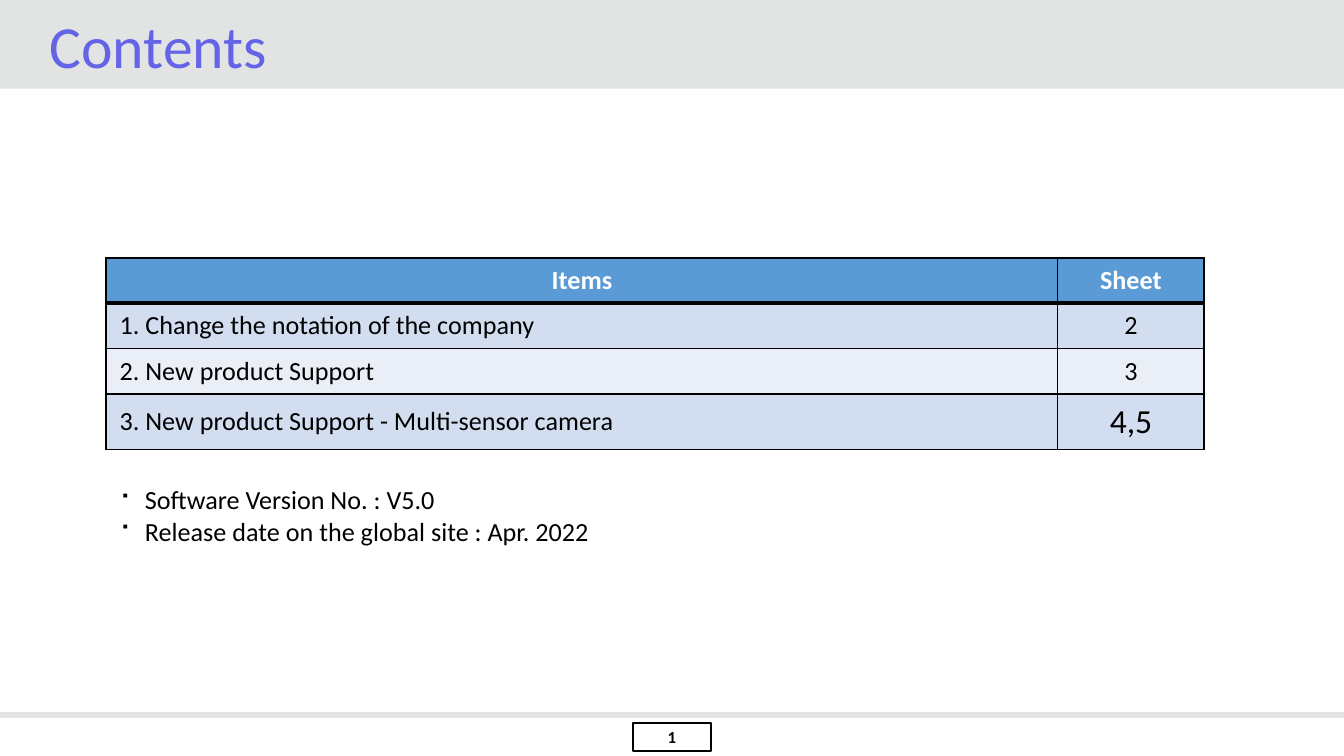
"""Build the contents slide with its table of items and release details."""
import lxml.etree
import pptx
import pptx.dml.color
import pptx.enum.shapes
import pptx.enum.text
import pptx.oxml
import pptx.oxml.ns
import pptx.util

Inches = pptx.util.Inches
Pt = pptx.util.Pt
ALIGN = pptx.enum.text.PP_ALIGN
MIDDLE = pptx.enum.text.MSO_ANCHOR.MIDDLE
COLORS = {
    "band": "E2E3E3",
    "title": "6464E6",
    "header": "5B9BD5",
    "odd": "D2DEEF",
    "even": "EAEFF7",
    "black": "000000",
    "white": "FFFFFF",
}


def rgb(name):
    return pptx.dml.color.RGBColor.from_string(COLORS[name])


def write(para, text, size=14, color="black", bold=False, align=ALIGN.LEFT, bullet=None):
    para.alignment = align
    if bullet:
        properties = para._p.get_or_add_pPr()
        properties.set("marL", str(Inches(0.19)))
        properties.set("indent", str(Inches(-0.19)))
        face = lxml.etree.SubElement(properties, pptx.oxml.ns.qn("a:buFont"))
        face.set("typeface", "Wingdings")
        mark = lxml.etree.SubElement(properties, pptx.oxml.ns.qn("a:buChar"))
        mark.set("char", bullet)
    span = para.add_run()
    span.text = text
    span.font.name = "Calibri"
    span.font.size = Pt(size)
    span.font.bold = bold
    span.font.color.rgb = rgb(color)


deck = pptx.Presentation()
deck.slide_width = Inches(10)
deck.slide_height = Inches(10) * 9 // 16
page = deck.slides.add_slide(deck.slide_layouts[6])
rectangle = pptx.enum.shapes.MSO_SHAPE.RECTANGLE

band = page.shapes.add_shape(rectangle, 0, 0, Inches(10), Inches(0.66))
band.shadow.inherit = False
band.fill.solid()
band.fill.fore_color.rgb = rgb("band")
band.line.fill.background()

rule = page.shapes.add_connector(
    pptx.enum.shapes.MSO_CONNECTOR.STRAIGHT, 0, Inches(5.32), Inches(10), Inches(5.32))
rule.line.color.rgb = rgb("band")
rule.line.width = Pt(3)
lxml.etree.SubElement(rule.element.spPr, pptx.oxml.ns.qn("a:effectLst"))

number = page.shapes.add_shape(
    rectangle, Inches(4.71), Inches(5.38), Inches(0.58), Inches(0.21))
number.shadow.inherit = False
number.fill.background()
number.line.color.rgb = rgb("black")
number.line.width = Pt(1)
frame = number.text_frame
frame.margin_left = frame.margin_right = Inches(0.03)
frame.margin_top = frame.margin_bottom = Inches(0.03)
frame.vertical_anchor = MIDDLE
write(frame.paragraphs[0], "1", size=9, bold=True, align=ALIGN.CENTER)

title = page.shapes.add_textbox(Inches(0.27), Inches(0.01), Inches(9.34), Inches(0.66))
frame = title.text_frame
frame.word_wrap = True
frame.vertical_anchor = MIDDLE
frame.margin_bottom = 0
frame.paragraphs[0].line_spacing = 0.9
write(frame.paragraphs[0], "Contents", size=32, color="title")

items = [
    ("Items", "Sheet"),
    ("1. Change the notation of the company", "2"),
    ("2. New product Support", "3"),
    ("3. New product Support - Multi-sensor camera", "4,5"),
]
table = page.shapes.add_table(
    len(items), 2, Inches(0.79), Inches(1.92), Inches(8.17), Inches(1.42)).table
for column, width in zip(table.columns, (7.08, 1.09)):
    column.width = Inches(width)
for row, height in zip(table.rows, (0.33, 0.34, 0.34, 0.41)):
    row.height = Inches(height)

for row, texts in enumerate(items):
    header = row == 0
    fill = "header" if header else "odd" if row % 2 else "even"
    for column, text in enumerate(texts):
        cell = table.cell(row, column)
        cell.vertical_anchor = MIDDLE
        write(
            cell.text_frame.paragraphs[0], text,
            size=18 if text == "4,5" else 14,
            color="white" if header else "black",
            bold=header,
            align=ALIGN.CENTER if header or column else ALIGN.LEFT)
        for side in "LRTB":
            thick = (row, side) in ((0, "B"), (1, "T"))
            cell._tc.get_or_add_tcPr().append(pptx.oxml.parse_xml(
                f'<a:ln{side} {pptx.oxml.ns.nsdecls("a")} w="{Pt(2.8 if thick else 0.93)}">'
                f'<a:solidFill><a:srgbClr val="{COLORS["black"]}"/></a:solidFill>'
                f'</a:ln{side}>'))
        cell.fill.solid()
        cell.fill.fore_color.rgb = rgb(fill)

release = page.shapes.add_textbox(Inches(0.79), Inches(3.55), Inches(5.4), Inches(0.57))
frame = release.text_frame
frame.word_wrap = True
details = ["Software Version No. : V5.0", "Release date on the global site : Apr. 2022"]
for index, text in enumerate(details):
    para = frame.add_paragraph() if index else frame.paragraphs[0]
    write(para, text, bullet="■")

deck.save("out.pptx")
